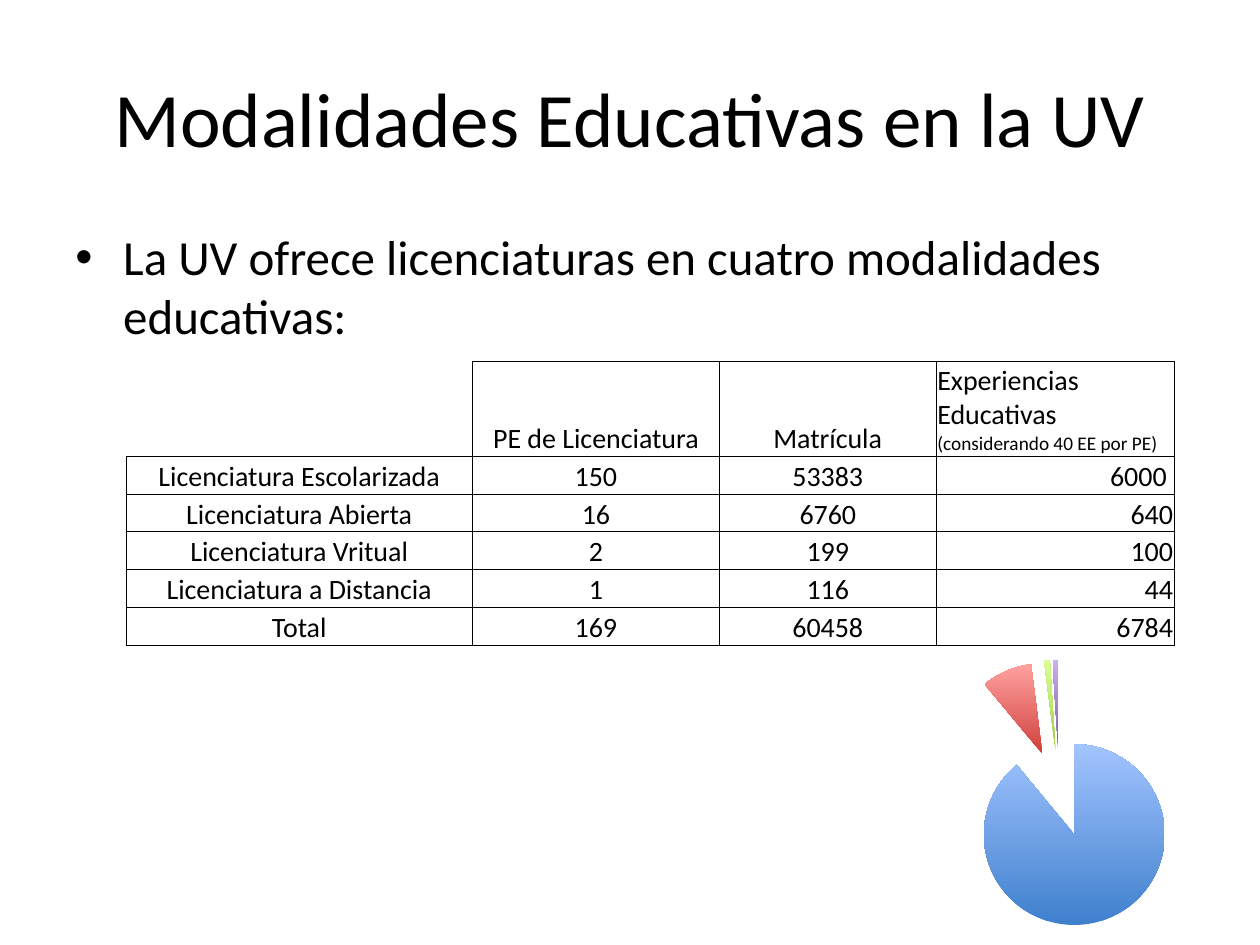
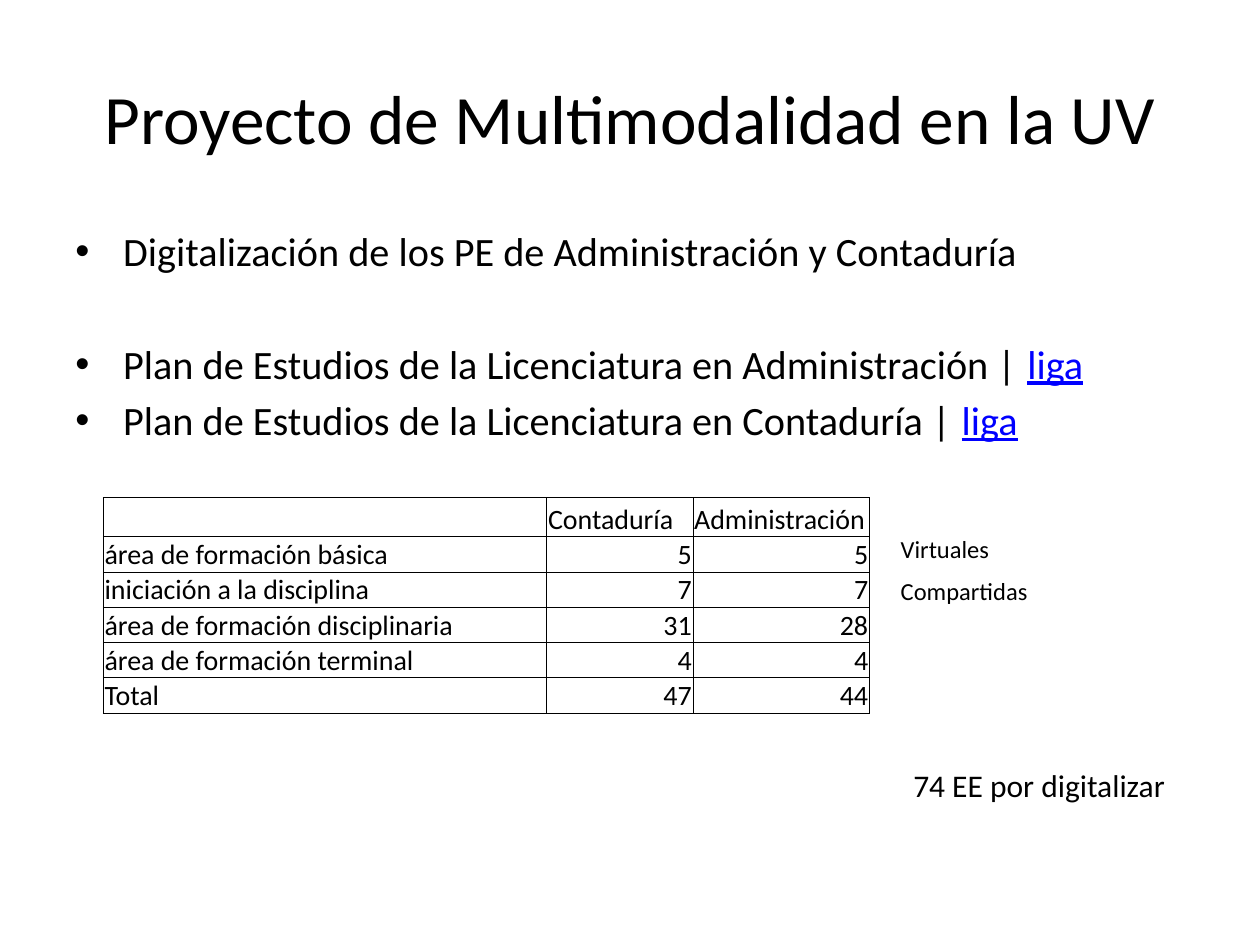
import dataclasses

import lxml.etree
import pptx
import pptx.chart.data
import pptx.dml.color
import pptx.enum.chart
import pptx.enum.text
import pptx.oxml.ns
import pptx.util

Inches = pptx.util.Inches
Pt = pptx.util.Pt
Align = pptx.enum.text.PP_ALIGN
Anchor = pptx.enum.text.MSO_ANCHOR
qn = pptx.oxml.ns.qn
SIDES = {"L": "lnL", "R": "lnR", "T": "lnT", "B": "lnB"}
ALIGNS = {"l": Align.LEFT, "c": Align.CENTER, "r": Align.RIGHT}


@dataclasses.dataclass(frozen=True)
class Theme:
    font: str = "Calibri"
    ink: str = "000000"
    link: str = "0000FF"
    table: float = 16
    small: float = 11
    note: float = 14
    total: float = 18
    chart: float = 10
    border: float = 0.5
    slices: tuple = (
        ("3F80CD", "A3C4FF"),
        ("D0403C", "FFA2A0"),
        ("A0CC48", "DAFF96"),
        ("7D58AA", "CBB0EE"),
    )


def apply(target, values):
    for name, value in values.items():
        setattr(target, name, value)


def color(code):
    return pptx.dml.color.RGBColor.from_string(code)


def add(parent, tag, **attrs):
    return lxml.etree.SubElement(parent, qn(tag), attrs)


class Deck:
    def __init__(self, theme):
        self.theme = theme
        self.file = pptx.Presentation()
        apply(self.file, {"slide_width": Inches(10), "slide_height": Inches(7.5)})
        self.slide = None

    def page(self, title, size):
        self.slide = self.file.slides.add_slide(self.file.slide_layouts[6])
        frame = self.box(0.5, 0.3, 9, 1.25, vertical_anchor=Anchor.MIDDLE)
        para = frame.paragraphs[0]
        para.alignment = Align.CENTER
        self.run(para, title, size)

    def box(self, left, top, width, height, **format):
        spot = map(Inches, (left, top, width, height))
        frame = self.slide.shapes.add_textbox(*spot).text_frame
        apply(frame, {"word_wrap": True, **format})
        return frame

    def run(self, para, text, size, link=False):
        run = para.add_run()
        run.text = text
        apply(run.font, {"name": self.theme.font, "size": Pt(size), "underline": link})
        run.font.color.rgb = color(self.theme.link if link else self.theme.ink)

    def note(self, text, left, top, width, height, size):
        frame = self.box(left, top, width, height, word_wrap=False)
        self.run(frame.paragraphs[0], text, size)

    def list(self, height, size, items):
        frame = self.box(0.5, 1.75, 9, height)
        for index, (text, link, gap) in enumerate(items):
            para = frame.add_paragraph() if index else frame.paragraphs[0]
            para.space_before = Pt(size * 0.2 + gap)
            props = para._p.get_or_add_pPr()
            props.set("marL", str(Inches(0.38)))
            props.set("indent", str(-Inches(0.38)))
            add(props, "a:buFont", typeface="Arial")
            add(props, "a:buChar", char="•")
            self.run(para, text, size)
            if link:
                self.run(para, link, size, link=True)

    def edge(self, cell, sides):
        props = cell._tc.get_or_add_tcPr()
        for side, tag in SIDES.items():
            line = add(props, f"a:{tag}", w=str(Pt(self.theme.border)))
            if side in sides:
                add(add(line, "a:solidFill"), "a:srgbClr", val=self.theme.ink)
            else:
                add(line, "a:noFill")

    def cell(self, cell, text, align, sides):
        self.edge(cell, sides)
        cell.fill.background()
        thin = Inches(0.01)
        apply(cell, {
            "vertical_anchor": Anchor.BOTTOM,
            "margin_left": thin,
            "margin_right": thin,
            "margin_top": thin,
            "margin_bottom": 0,
        })
        for index, line in enumerate(text.split("\n")):
            frame = cell.text_frame
            para = frame.add_paragraph() if index else frame.paragraphs[0]
            para.alignment = ALIGNS[align]
            self.run(para, line, self.theme.small if index else self.theme.table)

    def table(self, left, top, widths, heights, rows, heads, aligns, corner="LRTB"):
        spot = map(Inches, (left, top, sum(widths), sum(heights)))
        grid = self.slide.shapes.add_table(len(rows), len(widths), *spot).table
        apply(grid, {"first_row": False, "horz_banding": False})
        for column, width in zip(grid.columns, widths):
            column.width = Inches(width)
        for row, height in zip(grid.rows, heights):
            row.height = Inches(height)
        for i, row in enumerate(rows):
            for j, text in enumerate(row):
                align = aligns[j] if i else heads[j]
                self.cell(grid.cell(i, j), text, align, "LRTB" if i or j else corner)

    def pie(self, left, top, width, height, values, burst):
        data = pptx.chart.data.CategoryChartData()
        data.categories = [str(n + 1) for n in range(len(values))]
        data.add_series("Series 1", values)
        kind = pptx.enum.chart.XL_CHART_TYPE.PIE
        spot = map(Inches, (left, top, width, height))
        chart = self.slide.shapes.add_chart(kind, *spot, data).chart
        apply(chart, {"has_legend": False, "has_title": False})
        apply(chart.font, {"name": self.theme.font, "size": Pt(self.theme.chart)})
        chart.font.color.rgb = color(self.theme.ink)
        plot = chart.plots[0]
        plot.vary_by_categories = True
        series = plot.series[0]
        for index, shades in enumerate(self.theme.slices):
            format = series.points[index].format
            format.line.fill.background()
            format.fill.gradient()
            format.fill.gradient_angle = 90
            for stop, shade in zip(format.fill.gradient_stops, shades):
                stop.color.rgb = color(shade)
        for point in series._element.findall(qn("c:dPt")):
            blast = lxml.etree.Element(qn("c:explosion"), val=str(burst))
            point.find(qn("c:spPr")).addprevious(blast)


def modes(deck):
    deck.page("Modalidades Educativas en la UV", 44)
    deck.list(4.95, 28, [
        ("La UV ofrece licenciaturas en cuatro modalidades educativas:", "", 0),
    ])
    deck.pie(6.96, 5.1, 2.9, 2.4, (89, 9, 1, 1), 48)
    rows = [
        ("", "PE de Licenciatura", "Matrícula",
         "Experiencias Educativas\n(considerando 40 EE por PE)"),
        ("Licenciatura Escolarizada", "150", "53383", "6000 "),
        ("Licenciatura Abierta", "16", "6760", "640"),
        ("Licenciatura Vritual", "2", "199", "100"),
        ("Licenciatura a Distancia", "1", "116", "44"),
        ("Total", "169", "60458", "6784"),
    ]
    deck.table(1, 2.87, (2.75, 1.96, 1.72, 1.89), [0.75] + [0.3] * 5,
               rows, "cccl", "cccr", corner="RB")


def project(deck):
    deck.page("Proyecto de Multimodalidad en la UV", 39.6)
    plan = "Plan de Estudios de la Licenciatura en "
    deck.list(2.21, 23, [
        ("Digitalización de los PE de Administración y Contaduría", "", 0),
        (f"{plan}Administración | ", "liga", 32),
        (f"{plan}Contaduría | ", "liga", 0),
    ])
    rows = [
        ("", "Contaduría", "Administración"),
        ("área de formación básica", "5", "5"),
        ("iniciación a la disciplina", "7", "7"),
        ("área de formación disciplinaria", "31", "28"),
        ("área de formación terminal", "4", "4"),
        ("Total", "47", "44"),
    ]
    deck.table(0.82, 3.95, (3.52, 1.16, 1.4), [0.28] * 6, rows, "lll", "lrr")
    deck.note("Virtuales", 7.05, 4.19, 0.91, 0.34, deck.theme.note)
    deck.note("Compartidas", 7.05, 4.52, 1.22, 0.34, deck.theme.note)
    deck.note("74 EE por digitalizar", 7.15, 6.03, 2.23, 0.4, deck.theme.total)


def main():
    deck = Deck(Theme())
    modes(deck)
    project(deck)
    deck.file.save("out.pptx")


if __name__ == "__main__":
    main()
